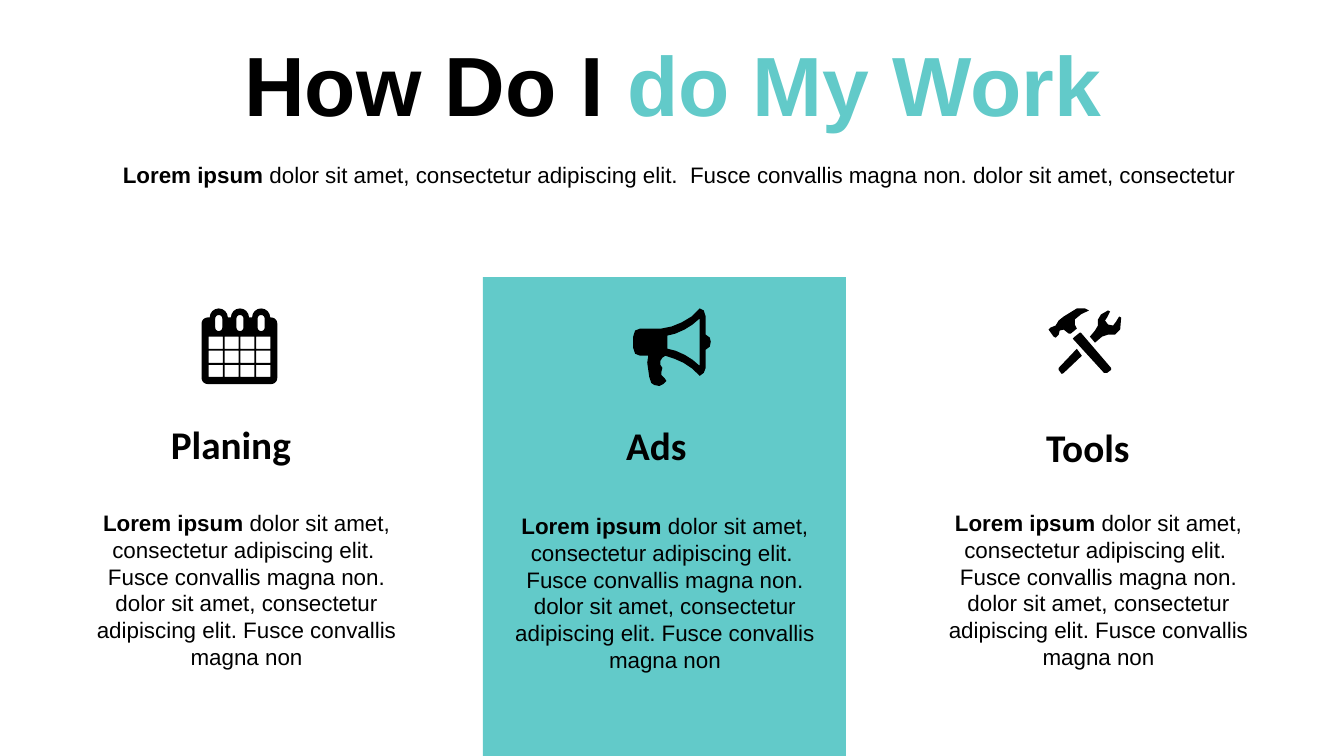
import math

import pptx
import pptx.dml.color
import pptx.enum.shapes
import pptx.enum.text
import pptx.util
from pptx.util import Inches

BLACK = pptx.dml.color.RGBColor(0x00, 0x00, 0x00)
TEAL = pptx.dml.color.RGBColor(0x62, 0xCA, 0xC9)
CENTER = pptx.enum.text.PP_ALIGN.CENTER
LEFT = pptx.enum.text.PP_ALIGN.LEFT

INTRO = ("dolor sit amet, consectetur adipiscing elit.  "
         "Fusce convallis magna non. dolor sit amet, consectetur")
DETAIL = INTRO + " adipiscing elit. Fusce convallis magna non"

HEADINGS = [("Planing", 1.18, 4.12), ("Ads", 5.4, 4.13), ("Tools", 9.68, 4.15)]
DETAIL_POSITIONS = [(0.83, 5), (4.98, 5.03), (9.28, 5)]

MEGAPHONE = [
    [(7.05, 3.39), (7.04, 3.44), (7, 3.47), (7, 3.65), (6.98, 3.7),
     (6.94, 3.73), (6.87, 3.66), (6.78, 3.6), (6.69, 3.56), (6.6, 3.53),
     (6.57, 3.55), (6.55, 3.58), (6.55, 3.62), (6.57, 3.65), (6.56, 3.69),
     (6.56, 3.72), (6.59, 3.75), (6.61, 3.78), (6.58, 3.81), (6.54, 3.83),
     (6.49, 3.82), (6.46, 3.8), (6.44, 3.74), (6.43, 3.67), (6.42, 3.6),
     (6.43, 3.53), (6.35, 3.53), (6.3, 3.51), (6.28, 3.45), (6.28, 3.34),
     (6.3, 3.28), (6.35, 3.26), (6.56, 3.26), (6.66, 3.24), (6.76, 3.2),
     (6.86, 3.14), (6.94, 3.06), (6.98, 3.08), (7, 3.14), (7, 3.32),
     (7.04, 3.35)],
    [(6.94, 3.16), (6.87, 3.22), (6.79, 3.27), (6.7, 3.31), (6.62, 3.33),
     (6.62, 3.46), (6.7, 3.48), (6.79, 3.52), (6.87, 3.57), (6.94, 3.63)],
]

HAMMER_AND_WRENCH = [
    [(10.51, 3.28), (10.55, 3.27), (10.6, 3.31), (10.62, 3.31), (10.68, 3.26),
     (10.66, 3.22), (10.66, 3.17), (10.72, 3.12), (10.8, 3.08), (10.76, 3.06),
     (10.68, 3.06), (10.55, 3.14), (10.5, 3.18), (10.47, 3.23), (10.42, 3.25),
     (10.4, 3.27), (10.45, 3.34), (10.47, 3.35), (10.5, 3.32)],
    [(10.72, 3.3), (10.71, 3.3), (10.66, 3.34), (10.64, 3.36), (10.95, 3.7),
     (10.98, 3.7), (11.02, 3.67), (11.02, 3.65)],
    [(11.12, 3.15), (11.1, 3.14), (11.07, 3.19), (11.04, 3.23), (10.99, 3.22),
     (10.96, 3.18), (10.98, 3.15), (11.01, 3.09), (10.99, 3.08), (10.92, 3.12),
     (10.89, 3.17), (10.89, 3.23), (10.86, 3.28), (10.81, 3.34), (10.86, 3.4),
     (10.93, 3.34), (10.99, 3.32), (11.06, 3.32), (11.11, 3.27)],
    [(10.5, 3.65), (10.5, 3.67), (10.53, 3.71), (10.55, 3.7), (10.73, 3.53),
     (10.68, 3.46)],
]


def arc(center_x, center_y, radius, start, sweep):
    steps = 8
    angles = [math.radians(start + sweep * step / steps) for step in range(steps + 1)]
    return [(center_x + radius * math.cos(angle), center_y + radius * math.sin(angle))
            for angle in angles]


def calendar_contours():
    ring_centers = [2.17 + 0.21 * column for column in range(3)]
    outline = arc(2.06, 3.21, 0.06, 180, 90)
    for center in ring_centers:
        outline += arc(center, 3.15, 0.09, 180, 180)
    outline += arc(2.69, 3.21, 0.06, 270, 90)
    outline += arc(2.69, 3.75, 0.06, 0, 90) + arc(2.06, 3.75, 0.06, 90, 90)
    contours = [outline]
    for center in ring_centers:
        contours.append(arc(center, 3.16, 0.035, 180, 180) + arc(center, 3.25, 0.035, 0, 180))
    for row in range(3):
        for column in range(4):
            left, top = 2.07 + 0.157 * column, 3.34 + 0.14 * row
            right, bottom = left + 0.14, top + 0.12
            contours.append([(left, top), (left, bottom), (right, bottom), (right, top)])
    return contours


def paint(shape, color):
    shape.shadow.inherit = False
    shape.fill.solid()
    shape.fill.fore_color.rgb = color
    shape.line.fill.background()


def add_icon(slide, contours):
    contours = [[(Inches(x), Inches(y)) for x, y in contour] for contour in contours]
    builder = slide.shapes.build_freeform(*contours[0][0], scale=1.0)
    for index, contour in enumerate(contours):
        if index:
            builder.move_to(*contour[0])
        builder.add_line_segments(contour[1:], close=True)
    paint(builder.convert_to_shape(), BLACK)


def write_runs(paragraph, runs, font_format):
    for text, color, bold in runs:
        run = paragraph.add_run()
        run.text = text
        run.font.color.rgb = color
        for name, value in {**font_format, "bold": bold}.items():
            setattr(run.font, name, value)


def add_text(slide, position, size, runs, alignment, font_name, points):
    box = slide.shapes.add_textbox(*map(Inches, position + size))
    frame = box.text_frame
    frame.word_wrap = True
    frame.auto_size = pptx.enum.text.MSO_AUTO_SIZE.SHAPE_TO_FIT_TEXT
    paragraph = frame.paragraphs[0]
    paragraph.alignment = alignment
    write_runs(paragraph, runs, {"name": font_name, "size": pptx.util.Pt(points)})


def add_lorem(slide, position, size, text, alignment):
    runs = [("Lorem ipsum ", BLACK, True), (text, BLACK, False)]
    add_text(slide, position, size, runs, alignment, "Arial", 16)


def set_title(slide):
    title = slide.shapes.title
    place = {"left": 1.81, "top": 0.69, "width": 9.73, "height": 0.71}
    for name, value in place.items():
        setattr(title, name, Inches(value))
    frame = title.text_frame
    frame_format = {
        "word_wrap": True,
        "auto_size": pptx.enum.text.MSO_AUTO_SIZE.NONE,
        "vertical_anchor": pptx.enum.text.MSO_ANCHOR.MIDDLE,
    }
    for name, value in frame_format.items():
        setattr(frame, name, value)
    paragraph = frame.paragraphs[0]
    paragraph.alignment = CENTER
    paragraph.line_spacing = pptx.util.Pt(40)
    runs = [("How Do I ", BLACK, True), ("do My Work", TEAL, True)]
    write_runs(paragraph, runs, {"name": "Arial", "size": pptx.util.Pt(60)})


def main():
    presentation = pptx.Presentation()
    presentation.slide_width = Inches(13.33)
    presentation.slide_height = Inches(7.5)
    slide = presentation.slides.add_slide(presentation.slide_layouts[5])
    set_title(slide)
    panel = slide.shapes.add_shape(
        pptx.enum.shapes.MSO_SHAPE.RECTANGLE,
        Inches(4.79), Inches(2.75), Inches(3.6), Inches(4.75))
    paint(panel, TEAL)
    add_lorem(slide, (1.12, 1.55), (11.51, 0.37), INTRO, LEFT)
    for contours in (calendar_contours(), MEGAPHONE, HAMMER_AND_WRENCH):
        add_icon(slide, contours)
    for position in DETAIL_POSITIONS:
        add_lorem(slide, position, (3.23, 1.72), DETAIL, CENTER)
    for heading, left, top in HEADINGS:
        add_text(slide, (left, top), (2.22, 0.57), [(heading, BLACK, True)],
                 CENTER, "Calibri", 28)
    presentation.save("out.pptx")


if __name__ == "__main__":
    main()
